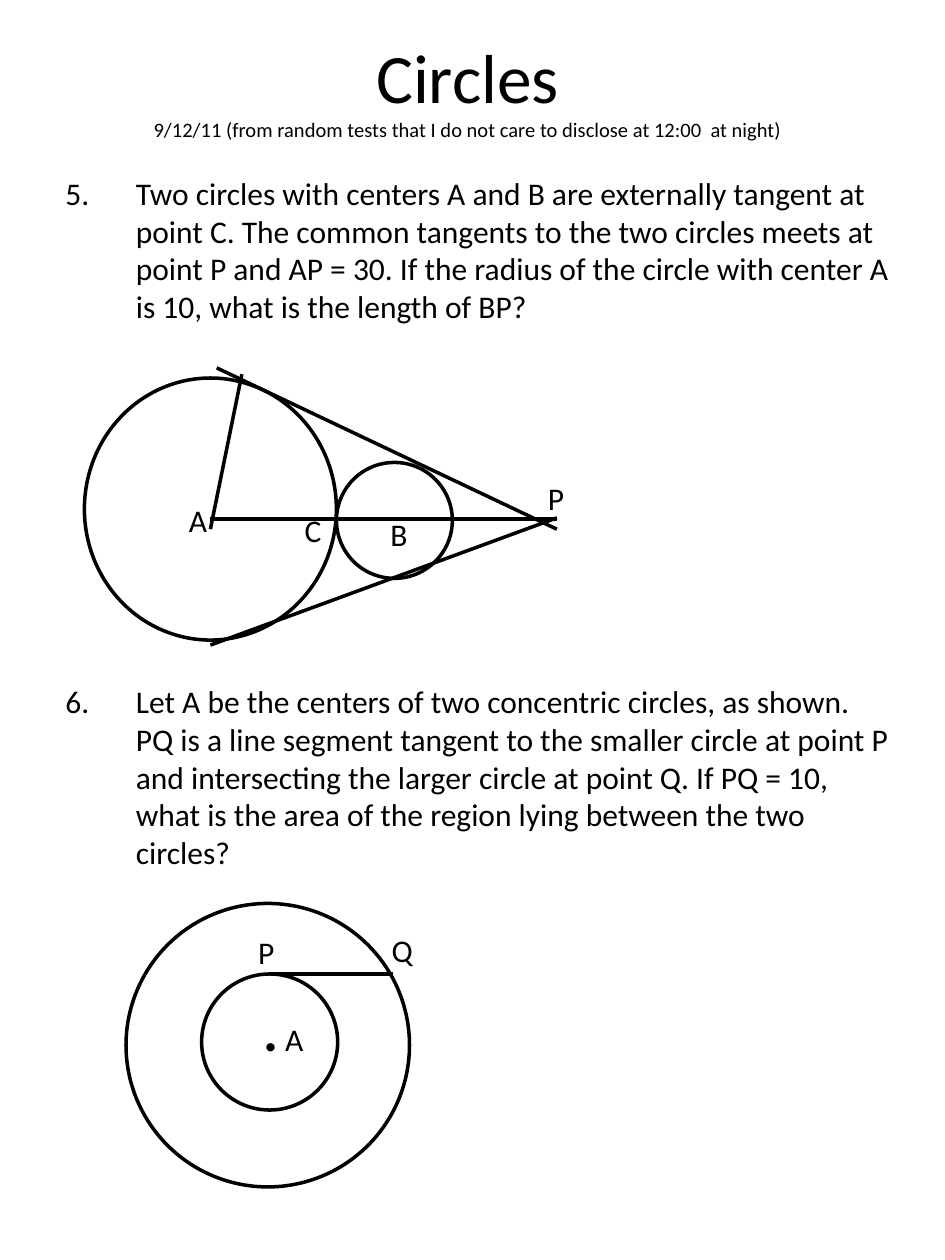
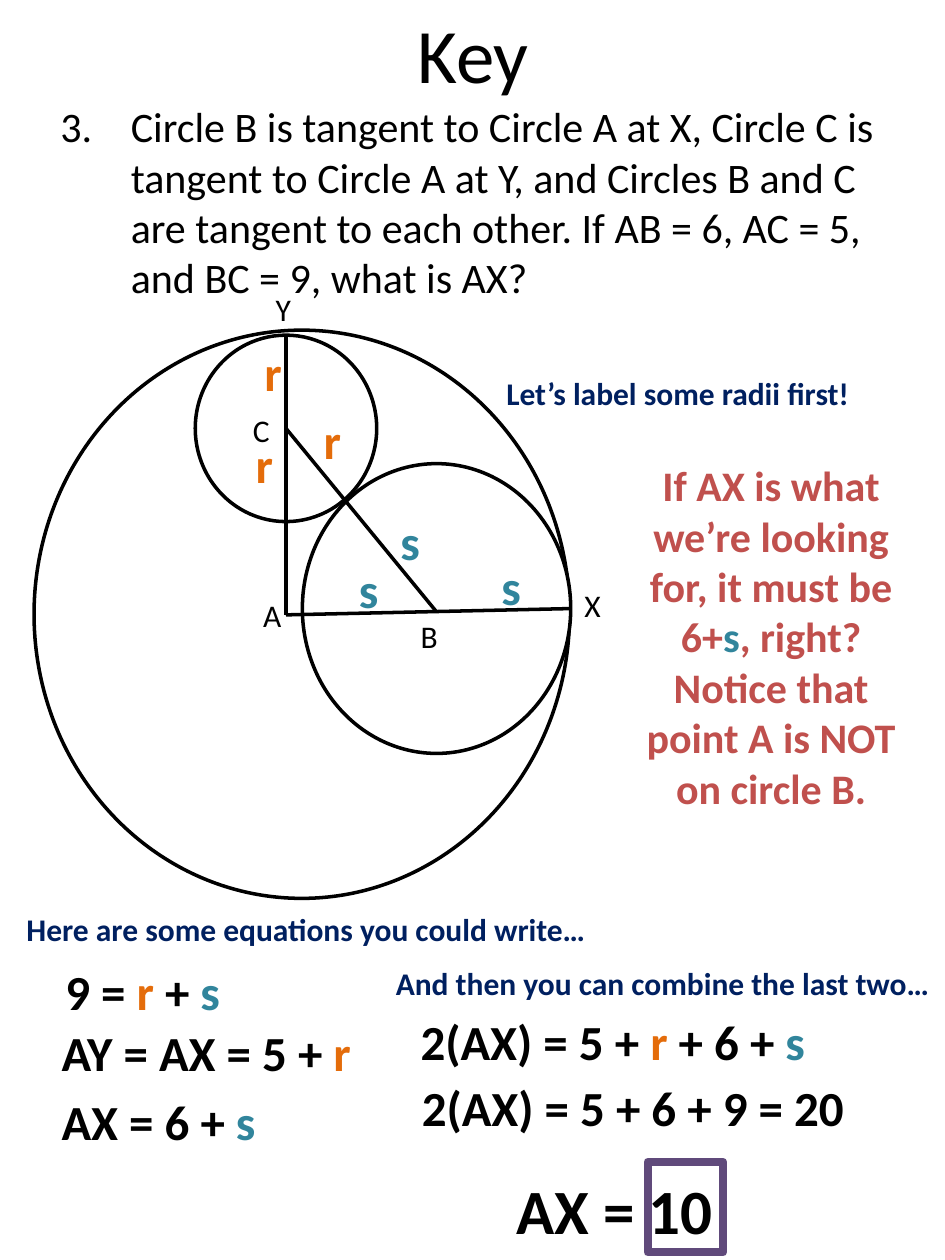
from lxml import etree
from pptx import Presentation
from pptx.dml.color import RGBColor
from pptx.enum.shapes import MSO_CONNECTOR, MSO_SHAPE
from pptx.enum.text import MSO_ANCHOR, PP_ALIGN
from pptx.oxml.ns import qn
from pptx.util import Inches, Pt

BLACK = RGBColor(0x00, 0x00, 0x00)
WHITE = RGBColor(0xFF, 0xFF, 0xFF)
NAVY = RGBColor(0x00, 0x20, 0x60)
ORANGE = RGBColor(0xE4, 0x6C, 0x0A)
TEAL = RGBColor(0x31, 0x85, 0x9C)
RED = RGBColor(0xC0, 0x50, 0x4D)
PURPLE = RGBColor(0x60, 0x4A, 0x7B)

LEFT, CENTER = PP_ALIGN.LEFT, PP_ALIGN.CENTER
TOP, MIDDLE = MSO_ANCHOR.TOP, MSO_ANCHOR.MIDDLE
OVAL, RECTANGLE = MSO_SHAPE.OVAL, MSO_SHAPE.RECTANGLE
STRAIGHT = MSO_CONNECTOR.STRAIGHT

R = ("r", {"color": ORANGE})
S = ("s", {"color": TEAL})


class Worksheet:
    def __init__(self, width, height):
        self.deck = Presentation()
        self.deck.slide_width = Inches(width)
        self.deck.slide_height = Inches(height)
        self.style = {"name": "Calibri", "size": 18, "bold": False, "color": BLACK}

    def page(self):
        self.slide = self.deck.slides.add_slide(self.deck.slide_layouts[6])
        self.canvas = self.slide.shapes

    def start_figure(self):
        self.canvas = self.slide.shapes.add_group_shape().shapes

    def end_figure(self):
        self.canvas = self.slide.shapes

    def fill_paragraph(self, para, spans, style):
        for text, changes in spans:
            if text == "\n":
                para.add_line_break()
                continue
            span = para.add_run()
            span.text = text
            values = {**self.style, **style, **changes}
            span.font.color.rgb = values.pop("color")
            values["size"] = Pt(values["size"])
            for name, value in values.items():
                setattr(span.font, name, value)

    def text(self, place, *spans, align=LEFT, anchor=TOP, **style):
        box = self.canvas.add_textbox(*map(Inches, place))
        box.text_frame.word_wrap = True
        box.text_frame.vertical_anchor = anchor
        para = box.text_frame.paragraphs[0]
        para.alignment = align
        spans = [(span, {}) if isinstance(span, str) else span for span in spans]
        self.fill_paragraph(para, spans, style)
        return box

    def title(self, place, *spans, size):
        self.text(place, *spans, align=CENTER, anchor=MIDDLE, size=size)

    def questions(self, place, start, *questions, size=18, gap=0):
        frame = self.text(place, questions[0], size=size).text_frame
        for question in questions[1:]:
            para = frame.add_paragraph()
            para.space_before = Pt(gap)
            self.fill_paragraph(para, [(question, {})], {"size": size})
        for para in frame.paragraphs:
            properties = para._p.get_or_add_pPr()
            properties.set("marL", str(Inches(0.56)))
            properties.set("indent", str(-Inches(0.56)))
            number = etree.SubElement(properties, qn("a:buAutoNum"))
            number.set("type", "arabicPeriod")
            number.set("startAt", str(start))

    def labels(self, extent, *items, **style):
        for text, left, top in items:
            self.text((left, top, *extent), text, **style)

    def outline(self, kind, place, color=BLACK, weight=2, fill=None):
        shape = self.canvas.add_shape(kind, *map(Inches, place))
        shape.shadow.inherit = False
        if fill is None:
            shape.fill.background()
        else:
            shape.fill.solid()
            shape.fill.fore_color.rgb = fill
        shape.line.color.rgb = color
        shape.line.width = Pt(weight)

    def circles(self, *places):
        for place in places:
            self.outline(OVAL, place, fill=WHITE)

    def segments(self, *ends):
        for points in ends:
            line = self.canvas.add_connector(STRAIGHT, *map(Inches, points))
            line.line.color.rgb = BLACK
            line.line.width = Pt(2)
            etree.SubElement(line._element.spPr, qn("a:effectLst"))


def build_problems(sheet):
    sheet.page()
    sheet.title(
        (0.17, 0.4, 7.08, 0.6), "Circles", "\n",
        ("9/12/11 (from random tests that I do not care to disclose at 12:00  at night)", {"size": 11.7}),
        size=39.6)
    sheet.questions(
        (0.42, 1.33, 6.75, 8.25), 5,
        "Two circles with centers A and B are externally tangent at point C. "
        "The common tangents to the two circles meets at point P and AP = 30. "
        "If the radius of the circle with center A is 10, what is the length of BP?",
        "Let A be the centers of two concentric circles, as shown. "
        "PQ is a line segment tangent to the smaller circle at point P and "
        "intersecting the larger circle at point Q. If PQ = 10, what is the "
        "area of the region lying between the two circles?",
        gap=204)
    label_extent = (1, 0.4)

    sheet.circles((1, 7.17, 2.25, 2.25), (1.6, 7.73, 1.08, 1.08))
    sheet.text((1.99, 7.85, 1, 0.64), (".", {"size": 32, "bold": True}), " A")
    sheet.segments((2.14, 7.73, 3.12, 7.73))
    sheet.labels(label_extent, ("P", 1.95, 7.36), ("Q", 3.01, 7.34))

    sheet.start_figure()
    sheet.circles((0.67, 3, 2, 2.08), (2.67, 3.67, 0.92, 0.92))
    sheet.segments(
        (1.72, 2.92, 4.42, 4.2), (1.67, 5.12, 4.42, 4.11),
        (1.67, 4.2, 1.92, 2.97), (1.67, 4.12, 4.42, 4.12))
    sheet.labels(
        label_extent, ("P", 4.25, 3.75), ("B", 3, 4.04),
        ("A", 1.4, 3.93), ("C", 2.32, 4.01))
    sheet.end_figure()


def build_key(sheet):
    sheet.page()
    sheet.title((0.38, -0.42, 6.75, 1.67), "Key", size=44)
    sheet.questions(
        (0.38, 0.75, 6.75, 7.75), 3,
        "Circle B is tangent to Circle A at X, Circle C is tangent to Circle A "
        "at Y, and Circles B and C are tangent to each other. If AB = 6, "
        "AC = 5, and BC = 9, what is AX?",
        size=24)
    sheet.outline(RECTANGLE, (5.14, 9.22, 0.6, 0.72), PURPLE, 4.5)

    sheet.start_figure()
    sheet.circles(
        (0.27, 2.62, 4.25, 4.51), (2.4, 3.68, 2.13, 2.3), (1.55, 2.66, 1.44, 1.48))
    sheet.segments(
        (2.27, 2.66, 2.27, 4.88), (4.53, 4.83, 2.27, 4.88), (3.46, 4.85, 2.27, 3.4))
    sheet.labels(
        (0.64, 1.12), ("Y", 2.09, 2.25), ("A", 1.99, 4.68), ("B", 3.24, 4.85),
        ("C", 1.91, 3.21), ("X", 4.54, 4.6))
    sheet.end_figure()

    sheet.labels(
        (0.25, 0.57), (R, 2.47, 3.21), (R, 1.93, 3.4), (R, 2, 2.67),
        (S, 3.08, 4.01), (S, 2.75, 4.39), (S, 3.88, 4.37), size=28, bold=True)
    sheet.text(
        (4.86, 3.6, 2.52, 2.93), "If AX is what we’re looking for, it must be 6+", S,
        ", right? Notice that point A is NOT on circle B.",
        align=CENTER, size=24, bold=True, color=RED)

    hints = [
        ("Let’s label some radii first!", 3.51, 2.92, 3.74),
        ("Here are some equations you could write…", 0, 7.17, 4.86),
        ("And then you can combine the last two…", 2.83, 7.6, 4.86),
    ]
    for text, left, top, width in hints:
        sheet.text((left, top, width, 0.4), text, align=CENTER, bold=True, color=NAVY)

    equations = [
        (0.42, 7.58, ["9 = ", R, " + ", S]),
        (0.39, 8.07, ["AY = AX = 5 + ", R]),
        (0.39, 8.61, ["AX = 6 + ", S]),
        (3.24, 7.98, ["2(AX) = 5 + ", R, " + 6 + ", S]),
        (3.25, 8.5, ["2(AX) = 5 + 6 + 9 = 20"]),
    ]
    for left, top, spans in equations:
        sheet.text((left, top, 4.86, 0.57), *spans, size=28, bold=True)
    sheet.text((4, 9.25, 4.86, 0.71), "AX = 10", size=36, bold=True)


def main():
    sheet = Worksheet(7.5, 10)
    build_problems(sheet)
    build_key(sheet)
    sheet.deck.save("out.pptx")


if __name__ == "__main__":
    main()
